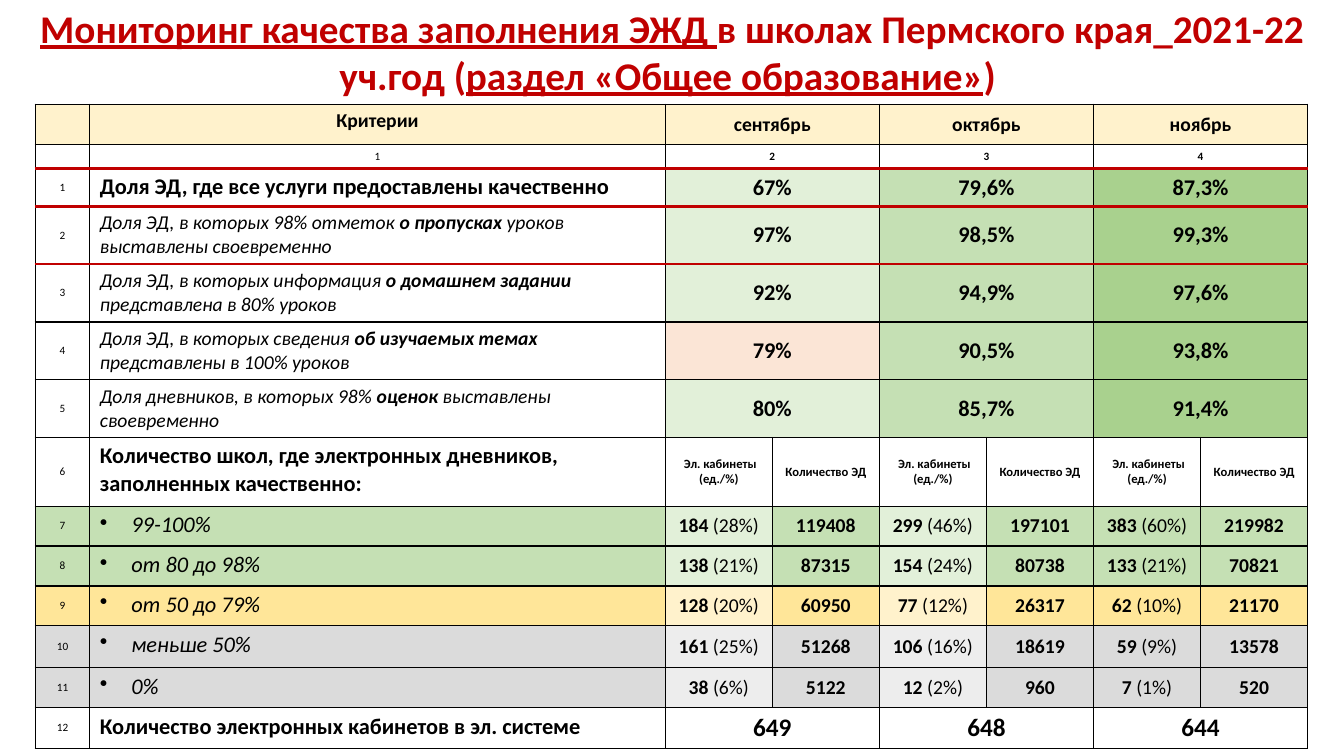
from lxml import etree
from pptx import Presentation
from pptx.dml.color import RGBColor
from pptx.enum.text import MSO_ANCHOR, PP_ALIGN
from pptx.oxml.ns import qn
from pptx.util import Pt

CENTER, LEFT = PP_ALIGN.CENTER, PP_ALIGN.LEFT
TOP, MIDDLE = MSO_ANCHOR.TOP, MSO_ANCHOR.MIDDLE

FONT = "Calibri"
BLACK, RED, WHITE = "000000", "C00000", "FFFFFF"
CREAM, YELLOW, PEACH = "FFF2CC", "FFE699", "FBE5D6"
PALE_GREEN, LIGHT_GREEN, GREEN = "E2F0D9", "C5E0B4", "A9D18E"
PALE_GREY, GREY = "EDEDED", "DBDBDB"

COLUMN_WIDTHS = [39, 411] + [76.5] * 6
ROW_HEIGHTS = [28.9, 17, 27, 41.3, 41.3, 41.3, 41.3, 49, 28.5, 28.5, 28.5, 30, 28.5, 29]
MONTH_COLUMNS = (2, 4, 6)
RED_LINES = (2, 3, 4)  # each is the row below a red line

TITLE = ("|Мониторинг качества заполнения ЭЖД |в школах Пермского края_2021-22 уч.год ("
         "|раздел «Общее образование»|) ")
MONTHS = ["сентябрь", "октябрь", "ноябрь"]
MONTH_FILLS = [PALE_GREEN, LIGHT_GREEN, GREEN]
TOTAL_CRITERION = "Доля ЭД, где все услуги предоставлены качественно"
TOTAL_SHARES = ["67%", "79,6%", "87,3%"]
CRITERIA = [
    ("Доля ЭД, в которых 98% отметок |о пропусках |уроков выставлены своевременно",
     ["97%", "98,5%", "99,3%"]),
    ("Доля ЭД, в которых информация |о домашнем задании| представлена в 80% уроков",
     ["92%", "94,9%", "97,6%"]),
    ("Доля ЭД, в которых сведения |об изучаемых темах| представлены в 100% уроков",
     ["79%", "90,5%", "93,8%"]),
    ("Доля дневников, в которых 98% |оценок| выставлены своевременно",
     ["80%", "85,7%", "91,4%"]),
]
SCHOOLS_HEADING = "Количество школ, где электронных дневников, заполненных качественно:"
SCHOOLS_COLUMNS = [" Эл. кабинеты (ед./%)", "Количество ЭД"] * 3
SCHOOLS = [
    ("99-100%", LIGHT_GREEN, PALE_GREEN,
     ["|184 |(28%)", "|119408", "|299 |(46%)", "|197101", "|383 |(60%)", "|219982"]),
    ("от 80 до 98%", LIGHT_GREEN, PALE_GREEN,
     ["|138 |(21%)", "|87315", "|154 |(24%)", "|80738", "|133 |(21%)", "|70821"]),
    ("от 50 до 79%", YELLOW, CREAM,
     ["|128 |(20%)", "|60950", "|77 |(12%)", "|26317", "|62 |(10%)", "|21170"]),
    ("меньше 50%", GREY, PALE_GREY,
     ["|161 |(25%)", "|51268", "|106 |(16%)", "|18619", "|59 |(9%)", "|13578"]),
    ("0%", GREY, PALE_GREY,
     ["|38 |(6%)", "|5122", "|12 |(2%)", "|960", "|7 |(1%)", "|520"]),
]
CABINETS_HEADING = "Количество электронных кабинетов в эл. системе"
CABINETS = ["649", "648", "644"]


def rgb(color):
    return RGBColor.from_string(color)


def style_paragraph(paragraph, size, color=BLACK, align=CENTER, bold=False, italic=False):
    paragraph.alignment = align
    font = paragraph.font
    font.name, font.size, font.bold, font.italic = FONT, Pt(size), bold, italic
    font.color.rgb = rgb(color)


def add_runs(paragraph, text, emphasis):
    """Split text at bars and set the emphasis (a font attribute) on every second part."""
    for index, part in enumerate(text.split("|")):
        if part:
            run = paragraph.add_run()
            run.text = part
            if index % 2:
                setattr(run.font, emphasis, True)


def add_bullet(paragraph):
    properties = paragraph._p.get_or_add_pPr()
    properties.set("marL", str(Pt(22.5)))
    properties.set("indent", str(-Pt(22.5)))
    bullet = etree.Element(qn("a:buChar"), char="•")
    properties.insert_element_before(bullet, "a:tabLst", "a:defRPr", "a:extLst")


def set_borders(cell, top, bottom):
    """Draw thin black sides; top and bottom tell whether those lines are thick and red."""
    properties = cell._tc.get_or_add_tcPr()
    edges = (("a:lnL", False), ("a:lnR", False), ("a:lnT", top), ("a:lnB", bottom))
    for position, (tag, is_red) in enumerate(edges):
        line = etree.Element(qn(tag), w=str(Pt(2.25 if is_red else 1)))
        fill = etree.SubElement(line, qn("a:solidFill"))
        etree.SubElement(fill, qn("a:srgbClr"), val=RED if is_red else BLACK)
        properties.insert(position, line)


def fill_cell(cell, text, size, fill=WHITE, anchor=MIDDLE, bullet=False, **style):
    cell.fill.solid()
    cell.fill.fore_color.rgb = rgb(fill)
    cell.vertical_anchor = anchor
    paragraph = cell.text_frame.paragraphs[0]
    style_paragraph(paragraph, size, **style)
    if bullet:
        add_bullet(paragraph)
    add_runs(paragraph, text, "bold")


def fill_label(table, row, text, size, fill=WHITE, **style):
    """Write the row number and the criterion; numbering starts below the two header rows."""
    fill_cell(table.cell(row, 0), str(row - 1), 8, fill)
    fill_cell(table.cell(row, 1), text, size, fill, TOP, align=LEFT, **style)


def fill_months(table, row, texts, size, fills):
    for column, text, fill in zip(MONTH_COLUMNS, texts, fills):
        cell = table.cell(row, column)
        cell.merge(table.cell(row, column + 1))
        fill_cell(cell, text, size, fill, bold=True)


def add_title(slide):
    box = slide.shapes.add_textbox(Pt(0), Pt(-0.7), Pt(960), Pt(75))
    box.text_frame.word_wrap = True
    paragraph = box.text_frame.paragraphs[0]
    style_paragraph(paragraph, 28, RED, bold=True)
    add_runs(paragraph, TITLE, "underline")


def add_grid(slide):
    frame = slide.shapes.add_table(len(ROW_HEIGHTS), len(COLUMN_WIDTHS), Pt(25.2), Pt(74.4),
                                   Pt(sum(COLUMN_WIDTHS)), Pt(sum(ROW_HEIGHTS)))
    table = frame.table
    table.first_row = table.horz_banding = False
    for column, width in zip(table.columns, COLUMN_WIDTHS):
        column.width = Pt(width)
    for index, (row, height) in enumerate(zip(table.rows, ROW_HEIGHTS)):
        row.height = Pt(height)
        for cell in row.cells:
            set_borders(cell, index in RED_LINES, index + 1 in RED_LINES)
    return table


def fill_header(table):
    fill_cell(table.cell(0, 0), "", 14, CREAM)
    fill_cell(table.cell(0, 1), "Критерии", 14, CREAM, TOP, bold=True)
    fill_months(table, 0, MONTHS, 14, [CREAM] * 3)
    fill_cell(table.cell(1, 0), "", 8)
    fill_cell(table.cell(1, 1), "1", 8)
    fill_months(table, 1, ["2", "3", "4"], 8, [WHITE] * 3)
    for column in MONTH_COLUMNS:
        cell = table.cell(1, column)
        cell.margin_left = cell.margin_right = cell.margin_top = cell.margin_bottom = Pt(0)


def fill_criteria(table):
    fill_label(table, 2, TOTAL_CRITERION, 16, bold=True)
    fill_months(table, 2, TOTAL_SHARES, 16, MONTH_FILLS)
    for row, (criterion, shares) in enumerate(CRITERIA, 3):
        fill_label(table, row, criterion, 14, italic=True)
        fills = [PEACH if share == "79%" else fill for share, fill in zip(shares, MONTH_FILLS)]
        fill_months(table, row, shares, 16, fills)


def fill_schools(table):
    fill_label(table, 7, SCHOOLS_HEADING, 16, bold=True)
    for column, heading in enumerate(SCHOOLS_COLUMNS, 2):
        fill_cell(table.cell(7, column), heading, 9, bold=True)
    for row, (share, fill, pale_fill, counts) in enumerate(SCHOOLS, 8):
        fill_label(table, row, share, 16, fill, italic=True, bullet=True)
        for column, count in enumerate(counts, 2):
            cell_fill = pale_fill if column in (2, 4) else fill
            fill_cell(table.cell(row, column), count, 14, cell_fill)
    fill_label(table, 13, CABINETS_HEADING, 16, bold=True)
    fill_months(table, 13, CABINETS, 18, [WHITE] * 3)


def main():
    presentation = Presentation()
    presentation.slide_width, presentation.slide_height = Pt(960), Pt(540)
    slide = presentation.slides.add_slide(presentation.slide_layouts[6])
    table = add_grid(slide)
    fill_header(table)
    fill_criteria(table)
    fill_schools(table)
    add_title(slide)
    presentation.save("out.pptx")


if __name__ == "__main__":
    main()
